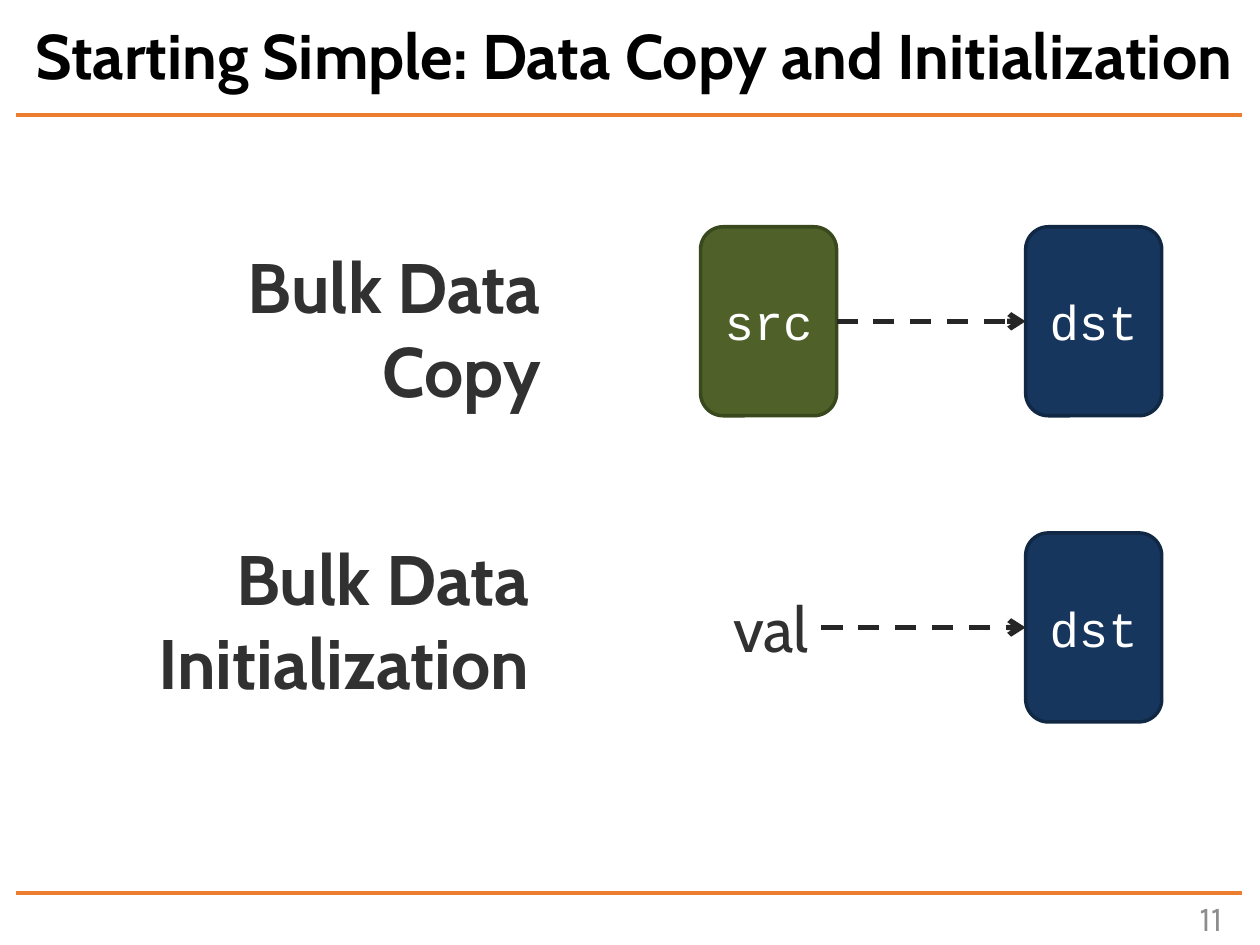
import pptx
import pptx.dml.color
import pptx.enum.dml
import pptx.enum.shapes
import pptx.enum.text
import pptx.oxml
import pptx.oxml.ns
import pptx.util

ALIGN = pptx.enum.text.PP_ALIGN
ANCHOR = pptx.enum.text.MSO_ANCHOR
Inches = pptx.util.Inches

TITLE = "Starting Simple: Data Copy and Initialization"
PAGE_NUMBER = "11"
HEADINGS = [
    ("Bulk Data Copy", (0.72, 1.88, 3.67, 1.45)),
    ("Bulk Data Initialization", (0.47, 4.2, 3.83, 1.45)),
]
VALUE = ("val", (5.72, 4.63, 0.8, 0.71))
BOX_WIDTH, BOX_HEIGHT = 1.08, 1.5
COLUMNS = {"src": 5.56, "dst": 8.14}
ROWS = [1.8, 4.23]
BOXES = [("src", 0), ("dst", 0), ("dst", 1)]
BOX_COLORS = {"src": ("4F6128", "3A481E"), "dst": ("17365D", "112845")}
ARROW_STARTS = [COLUMNS["src"] + BOX_WIDTH, VALUE[1][0] + VALUE[1][2]]
RULE_LEFT, RULE_RIGHT = 0.13, 9.86
RULE_TOPS = [0.91, 7.09]
TEXT_COLOR = "313131"


def color(value):
    return pptx.dml.color.RGBColor.from_string(value)


def write(shape, text, size, font, fill, align=ALIGN.LEFT, anchor=ANCHOR.TOP,
          bold=False, wrap=True):
    frame = shape.text_frame
    frame.word_wrap = wrap
    frame.vertical_anchor = anchor
    paragraph = frame.paragraphs[0]
    paragraph.alignment = align
    run = paragraph.add_run()
    run.text = text
    run.font.size = pptx.util.Pt(size)
    run.font.name = font
    run.font.bold = bold
    run.font.color.rgb = color(fill)
    return paragraph


def add_text(slide, place, *args, **options):
    shape = slide.shapes.add_textbox(*map(Inches, place))
    write(shape, *args, **options)


def add_line(slide, left, right, top, stroke, width):
    line = slide.shapes.add_connector(
        pptx.enum.shapes.MSO_CONNECTOR.STRAIGHT, *map(Inches, (left, top, right, top)))
    line.line.color.rgb = color(stroke)
    line.line.width = pptx.util.Pt(width)
    properties = line.line._get_or_add_ln().getparent()
    pptx.oxml.ns.qn("a:effectLst")
    properties.append(pptx.oxml.parse_xml(
        f"<a:effectLst {pptx.oxml.ns.nsdecls('a')}/>"))
    return line


def add_arrow(slide, left, right, top):
    arrow = add_line(slide, left, right, top, "262626", 3)
    arrow.line.dash_style = pptx.enum.dml.MSO_LINE.DASH
    arrow.line._get_or_add_ln().append(pptx.oxml.parse_xml(
        f"<a:tailEnd {pptx.oxml.ns.nsdecls('a')} type='arrow'/>"))


def add_box(slide, name, row):
    shape = slide.shapes.add_shape(
        pptx.enum.shapes.MSO_SHAPE.ROUNDED_RECTANGLE,
        *map(Inches, (COLUMNS[name], ROWS[row], BOX_WIDTH, BOX_HEIGHT)))
    fill, stroke = BOX_COLORS[name]
    shape.shadow.inherit = False
    shape.fill.solid()
    shape.fill.fore_color.rgb = color(fill)
    shape.line.color.rgb = color(stroke)
    shape.line.width = pptx.util.Pt(2)
    write(shape, name, 28, "Courier New", "FFFFFF", ALIGN.CENTER, ANCHOR.MIDDLE)


def main():
    presentation = pptx.Presentation()
    presentation.slide_width = Inches(10)
    presentation.slide_height = Inches(7.5)
    slide = presentation.slides.add_slide(presentation.slide_layouts[5])

    title = slide.shapes.title
    title.left, title.top, title.width, title.height = map(Inches, (0.18, 0.14, 9.73, 0.66))
    paragraph = write(title, TITLE, 36, "Cabin", "000000", anchor=ANCHOR.MIDDLE, bold=True)
    paragraph.line_spacing = 0.9
    title.text_frame.auto_size = pptx.enum.text.MSO_AUTO_SIZE.NONE

    add_text(slide, (8.72, 7.08, 1.08, 0.4), PAGE_NUMBER, 20, "Karla", "8C8C8C",
             ALIGN.RIGHT, ANCHOR.MIDDLE)
    for top in RULE_TOPS:
        add_line(slide, RULE_LEFT, RULE_RIGHT, top, "ED7D31", 2.25)
    for text, place in HEADINGS:
        add_text(slide, place, text, 40, "Cabin", TEXT_COLOR, ALIGN.RIGHT, bold=True)
    for name, row in BOXES:
        add_box(slide, name, row)
    for start, top in zip(ARROW_STARTS, ROWS):
        add_arrow(slide, start, COLUMNS["dst"], top + BOX_HEIGHT / 2)
    text, place = VALUE
    add_text(slide, place, text, 36, "Cabin", TEXT_COLOR, wrap=False)

    presentation.save("out.pptx")


if __name__ == "__main__":
    main()
